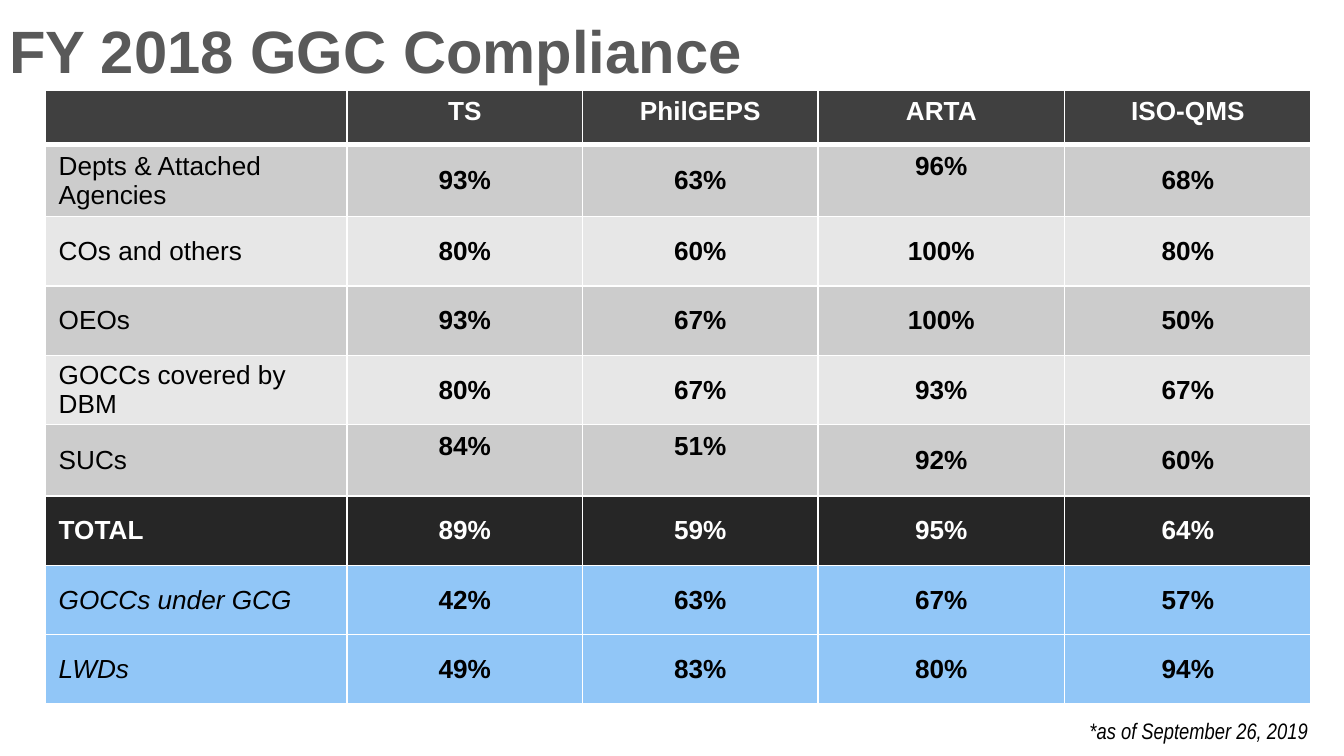
from lxml import etree
from pptx import Presentation
from pptx.dml.color import RGBColor
from pptx.enum.text import MSO_ANCHOR, PP_ALIGN
from pptx.oxml.ns import qn
from pptx.util import Cm, Pt

WHITE = RGBColor(0xFF, 0xFF, 0xFF)
BLACK = RGBColor(0x00, 0x00, 0x00)
TITLE_GRAY = RGBColor(0x59, 0x59, 0x59)
HEADER_GRAY = RGBColor(0x40, 0x40, 0x40)
DARK_BAND = RGBColor(0xCC, 0xCC, 0xCC)
LIGHT_BAND = RGBColor(0xE7, 0xE7, 0xE7)
TOTAL_GRAY = RGBColor(0x26, 0x26, 0x26)
BLUE = RGBColor(0x91, 0xC6, 0xF7)

HEADINGS = ["", "TS", "PhilGEPS", "ARTA", "ISO-QMS"]
# Label, percentages and fill of each row
ROWS = [
    ("Depts & Attached Agencies", (93, 63, 96, 68), DARK_BAND),
    ("COs and others", (80, 60, 100, 80), LIGHT_BAND),
    ("OEOs", (93, 67, 100, 50), DARK_BAND),
    ("GOCCs covered by DBM", (80, 67, 93, 67), LIGHT_BAND),
    ("SUCs", (84, 51, 92, 60), DARK_BAND),
    ("TOTAL", (89, 59, 95, 64), TOTAL_GRAY),
    ("GOCCs under GCG", (42, 63, 67, 57), BLUE),
    ("LWDs", (49, 83, 80, 94), BLUE),
]
COLUMN_WIDTHS = [5.7, 4.45, 4.45, 4.66, 4.66]
ROW_HEIGHTS = [1.01, 1.36, 1.31, 1.31, 1.31, 1.35, 1.31, 1.31, 1.31]
RAISED_CELLS = {(1, 3), (5, 1), (5, 2)}  # values set one half line higher


def format_text(text_frame, size, color, align, font_name="Arial", bold=False, italic=False):
    paragraph = text_frame.paragraphs[0]
    paragraph.alignment = align
    for run in paragraph.runs:
        font = run.font
        font.name, font.size = font_name, Pt(size)
        font.bold, font.italic = bold, italic
        font.color.rgb = color


def set_borders(cell, bottom_width):
    properties = cell._tc.get_or_add_tcPr()
    widths = {"a:lnL": 1, "a:lnR": 1, "a:lnT": 1, "a:lnB": bottom_width}
    for position, (tag, width) in enumerate(widths.items()):
        line = etree.Element(qn(tag), w=str(Pt(width)))
        fill = etree.SubElement(line, qn("a:solidFill"))
        etree.SubElement(fill, qn("a:srgbClr"), val=str(WHITE))
        properties.insert(position, line)


def fill_cell(cell, text, fill, align, bold, italic=False, margin=0.13):
    cell.fill.solid()
    cell.fill.fore_color.rgb = fill
    cell.margin_left = cell.margin_right = Cm(0.25)
    cell.margin_top = cell.margin_bottom = Cm(margin)
    cell.vertical_anchor = MSO_ANCHOR.TOP if fill == HEADER_GRAY else MSO_ANCHOR.MIDDLE
    cell.text_frame.text = text
    color = WHITE if fill in (HEADER_GRAY, TOTAL_GRAY) else BLACK
    format_text(cell.text_frame, 14, color, align, bold=bold, italic=italic)


def add_title(slide, text):
    title = slide.shapes.title
    title.left, title.top, title.width, title.height = Cm(-0.08), Cm(-0.25), Cm(25.4), Cm(2.39)
    title.text_frame.text = text
    title.text_frame.vertical_anchor = MSO_ANCHOR.MIDDLE
    format_text(title.text_frame, 32, TITLE_GRAY, PP_ALIGN.LEFT, bold=True)


def add_compliance_table(slide):
    table = slide.shapes.add_table(
        len(ROW_HEIGHTS), len(COLUMN_WIDTHS), Cm(0.86), Cm(1.7),
        Cm(sum(COLUMN_WIDTHS)), Cm(sum(ROW_HEIGHTS))).table
    for column, width in zip(table.columns, COLUMN_WIDTHS):
        column.width = Cm(width)
    for row, height in zip(table.rows, ROW_HEIGHTS):
        row.height = Cm(height)

    # Header row
    for column, heading in enumerate(HEADINGS):
        fill_cell(table.cell(0, column), heading, HEADER_GRAY, PP_ALIGN.CENTER, bold=True)

    # Agency rows
    for row, (label, values, fill) in enumerate(ROWS, start=1):
        fill_cell(table.cell(row, 0), label, fill, PP_ALIGN.LEFT, bold=fill == TOTAL_GRAY,
                  italic=fill == BLUE, margin=0.1)
        for column, value in enumerate(values, start=1):
            cell = table.cell(row, column)
            fill_cell(cell, f"{value}%", fill, PP_ALIGN.CENTER, bold=True)
            if (row, column) in RAISED_CELLS:
                cell.margin_bottom = Cm(0.66)

    # White rules, heavier around the foot of the header
    for row in range(len(ROW_HEIGHTS)):
        for column in range(len(COLUMN_WIDTHS)):
            set_borders(table.cell(row, column), 3 if row == 0 else 1)


def add_footnote(slide, text):
    footnote = slide.shapes.add_textbox(Cm(13.97), Cm(13.44), Cm(11), Cm(0.77))
    footnote.text_frame.word_wrap = True
    footnote.text_frame.text = text
    format_text(footnote.text_frame, 12, BLACK, PP_ALIGN.RIGHT, "Arial Narrow", italic=True)


def main():
    presentation = Presentation()
    presentation.slide_width, presentation.slide_height = Cm(25.4), Cm(14.29)
    slide = presentation.slides.add_slide(presentation.slide_layouts[5])
    add_compliance_table(slide)
    add_title(slide, "FY 2018 GGC Compliance")
    add_footnote(slide, "*as of September 26, 2019")
    presentation.save("out.pptx")


if __name__ == "__main__":
    main()
